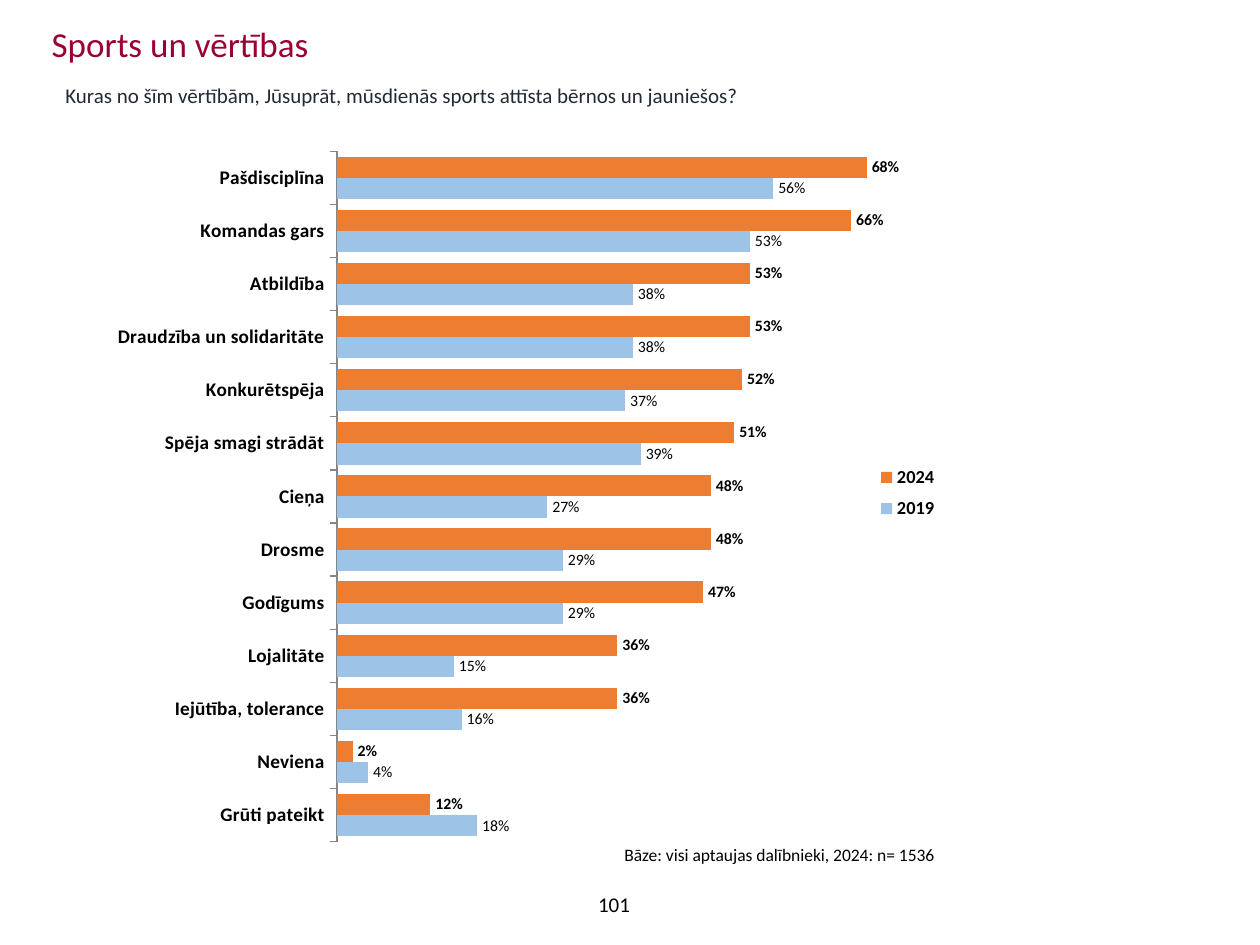
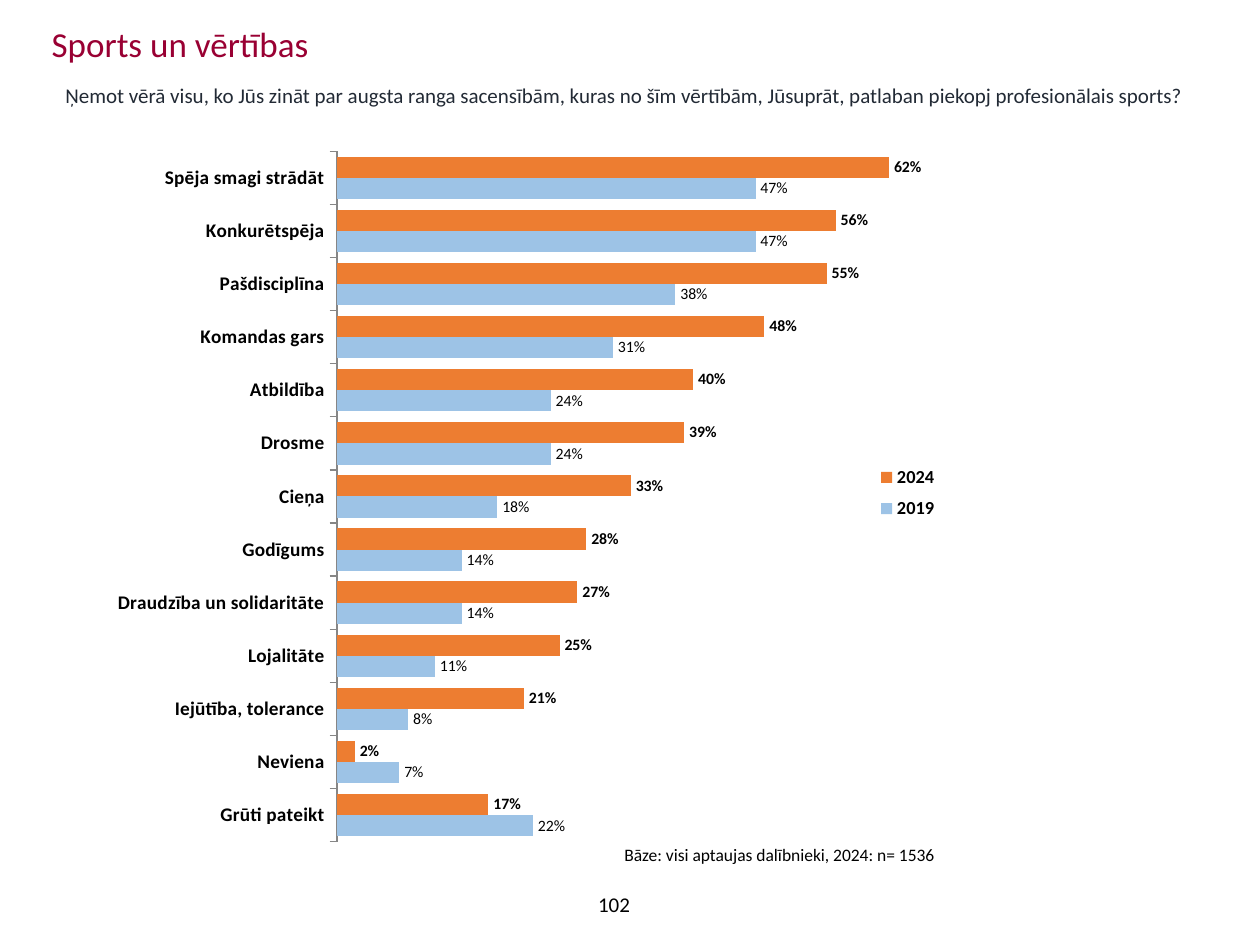
"""Build two slides that compare survey answers on sport and values."""
from typing import NamedTuple

from lxml import etree
from pptx import Presentation
from pptx.chart.chart import Chart
from pptx.chart.data import CategoryChartData
from pptx.dml.color import RGBColor
from pptx.enum.chart import (XL_CHART_TYPE, XL_LABEL_POSITION,
                             XL_LEGEND_POSITION, XL_TICK_MARK)
from pptx.enum.text import MSO_ANCHOR, MSO_AUTO_SIZE, PP_ALIGN
from pptx.oxml.ns import qn
from pptx.slide import Slide
from pptx.text.text import TextFrame
from pptx.util import Emu, Pt

BARS = XL_CHART_TYPE.BAR_CLUSTERED
OUT_END = XL_LABEL_POSITION.OUTSIDE_END
RIGHT = XL_LEGEND_POSITION.RIGHT
TICK_OUT = XL_TICK_MARK.OUTSIDE
TICK_NONE = XL_TICK_MARK.NONE
TOP, MIDDLE = MSO_ANCHOR.TOP, MSO_ANCHOR.MIDDLE
LEFT, CENTER = PP_ALIGN.LEFT, PP_ALIGN.CENTER
NO_FIT, GROW = MSO_AUTO_SIZE.NONE, MSO_AUTO_SIZE.SHAPE_TO_FIT_TEXT

FONT = "Calibri"
COLORS = {"title": "990033", "ask": "222A35", "text": "000000",
          "axis": "868686", "2019": "9DC3E6", "2024": "ED7D31"}
TITLE = "Sports un vērtības"
BASE = "Bāze: visi aptaujas dalībnieki, 2024: n= 1536"


class Box(NamedTuple):
    """A frame in px."""
    left: int
    top: int
    width: int
    height: int


class Look(NamedTuple):
    """The text style of a box."""
    size: int
    color: str
    align: PP_ALIGN = LEFT
    anchor: MSO_ANCHOR = TOP
    wrap: bool = True


class Answer(NamedTuple):
    """A value with its percentages in both years."""
    name: str
    new: int
    old: int


class Page(NamedTuple):
    """The content of one slide."""
    number: int
    ask: str
    limit: float
    answers: list[Answer]


TITLE_BOX = Box(39, 16, 1181, 62)
ASK_BOX = Box(53, 76, 1181, 46)
CHART_BOX = Box(100, 137, 878, 712)
BASE_BOX = Box(612, 838, 340, 34)
PAGE_BOX = Box(467, 879, 294, 50)
PLOT = (0.27, 0.02, 0.71, 0.97)
LEGEND = (0.88, 0.45, 0.08, 0.1)

PAGES = [
    Page(101, "Kuras no šīm vērtībām, Jūsuprāt, mūsdienās sports attīsta "
         "bērnos un jauniešos?", 0.8, [
             Answer("Pašdisciplīna", 68, 56),
             Answer("Komandas gars", 66, 53),
             Answer("Atbildība", 53, 38),
             Answer("Draudzība un solidaritāte", 53, 38),
             Answer("Konkurētspēja", 52, 37),
             Answer("Spēja smagi strādāt", 51, 39),
             Answer("Cieņa", 48, 27),
             Answer("Drosme", 48, 29),
             Answer("Godīgums", 47, 29),
             Answer("Lojalitāte", 36, 15),
             Answer("Iejūtība, tolerance", 36, 16),
             Answer("Neviena", 2, 4),
             Answer("Grūti pateikt", 12, 18)]),
    Page(102, "Ņemot vērā visu, ko Jūs zināt par augsta ranga sacensībām, "
         "kuras no šīm vērtībām, Jūsuprāt, patlaban piekopj profesionālais "
         "sports?", 0.7, [
             Answer("Spēja smagi strādāt", 62, 47),
             Answer("Konkurētspēja", 56, 47),
             Answer("Pašdisciplīna", 55, 38),
             Answer("Komandas gars", 48, 31),
             Answer("Atbildība", 40, 24),
             Answer("Drosme", 39, 24),
             Answer("Cieņa", 33, 18),
             Answer("Godīgums", 28, 14),
             Answer("Draudzība un solidaritāte", 27, 14),
             Answer("Lojalitāte", 25, 11),
             Answer("Iejūtība, tolerance", 21, 8),
             Answer("Neviena", 2, 7),
             Answer("Grūti pateikt", 17, 22)]),
]


def px(count: int) -> Emu:
    """Turn px into EMU."""
    return Emu(round(count * 914400 / 126))


def place(box: Box) -> list[Emu]:
    """Turn a box into EMU lengths."""
    return [px(side) for side in box]


def paint(name: str) -> RGBColor:
    """Look up a colour."""
    return RGBColor.from_string(COLORS[name])


def write(frame: TextFrame, text: str, look: Look) -> None:
    """Fill a text frame with one styled paragraph."""
    frame.text = text
    frame.word_wrap = look.wrap
    frame.auto_size = NO_FIT if look.wrap else GROW
    frame.vertical_anchor = look.anchor
    para = frame.paragraphs[0]
    para.alignment = look.align
    para.font.name = FONT
    para.font.size = Pt(look.size)
    para.font.color.rgb = paint(look.color)


def add_text(slide: Slide, box: Box, text: str, look: Look) -> None:
    """Add a text box."""
    write(slide.shapes.add_textbox(*place(box)).text_frame, text, look)


def add_title(slide: Slide) -> None:
    """Move and fill the title placeholder."""
    title = slide.shapes.title
    title.left, title.top, title.width, title.height = place(TITLE_BOX)
    write(title.text_frame, TITLE, Look(20, "title"))


def lay_out(chart: Chart, tag: str, index: int, area: tuple[float, ...],
            inner: bool = False) -> None:
    """Fix a chart part at fractions of the chart's size."""
    part = chart.element.find(".//" + qn(tag))
    for old in part.findall(qn("c:layout")):
        part.remove(old)
    layout = etree.Element(qn("c:layout"))
    manual = etree.SubElement(layout, qn("c:manualLayout"))
    pairs = [("layoutTarget", "inner")] if inner else []
    pairs += [("xMode", "edge"), ("yMode", "edge"), *zip("xywh", area)]
    for key, val in pairs:
        etree.SubElement(manual, qn("c:" + key)).set("val", str(val))
    part.insert(index, layout)


def style_axes(chart: Chart, limit: float) -> None:
    """Format the names' axis and hide the values' axis."""
    names = chart.category_axis
    names.major_tick_mark = TICK_OUT
    names.minor_tick_mark = TICK_NONE
    names.has_major_gridlines = False
    names.tick_labels.font.size = Pt(11)
    names.tick_labels.font.bold = True
    names.format.line.color.rgb = paint("axis")
    names.format.line.width = Pt(0.75)
    values = chart.value_axis
    values.minimum_scale = 0
    values.maximum_scale = limit
    values.has_major_gridlines = False
    values.visible = False


def style_bars(chart: Chart) -> None:
    """Colour and label the bars of each year."""
    plot = chart.plots[0]
    plot.gap_width = 50
    plot.overlap = 0
    plot.vary_by_categories = False
    for year in plot.series:
        year.format.fill.solid()
        year.format.fill.fore_color.rgb = paint(year.name)
        labels = year.data_labels
        labels.show_value = True
        labels.number_format = "0%"
        labels.number_format_is_linked = False
        labels.position = OUT_END
        labels.font.size = Pt(9)
        labels.font.bold = year.name == "2024"


def add_bars(slide: Slide, page: Page) -> None:
    """Add the bar chart of both years."""
    rows = page.answers[::-1]
    data = CategoryChartData(number_format="0%")
    data.categories = [row.name for row in rows]
    data.add_series("2019", [row.old / 100 for row in rows])
    data.add_series("2024", [row.new / 100 for row in rows])
    chart = slide.shapes.add_chart(BARS, *place(CHART_BOX), data).chart
    chart.has_title = False
    chart.font.name = FONT
    chart.font.size = Pt(18)
    chart.font.color.rgb = paint("text")
    style_axes(chart, page.limit)
    style_bars(chart)
    chart.has_legend = True
    chart.legend.position = RIGHT
    chart.legend.include_in_layout = False
    chart.legend.font.size = Pt(10.5)
    chart.legend.font.bold = True
    lay_out(chart, "c:plotArea", 0, PLOT, inner=True)
    lay_out(chart, "c:legend", 1, LEGEND)


def main() -> None:
    """Build and save the deck."""
    deck = Presentation()
    deck.slide_width, deck.slide_height = px(1260), px(945)
    for page in PAGES:
        slide = deck.slides.add_slide(deck.slide_layouts[5])
        add_title(slide)
        add_text(slide, ASK_BOX, page.ask, Look(12, "ask"))
        add_bars(slide, page)
        add_text(slide, BASE_BOX, BASE, Look(10, "text", wrap=False))
        add_text(slide, PAGE_BOX, str(page.number),
                 Look(12, "text", CENTER, MIDDLE))
    deck.save("out.pptx")


if __name__ == "__main__":
    main()
